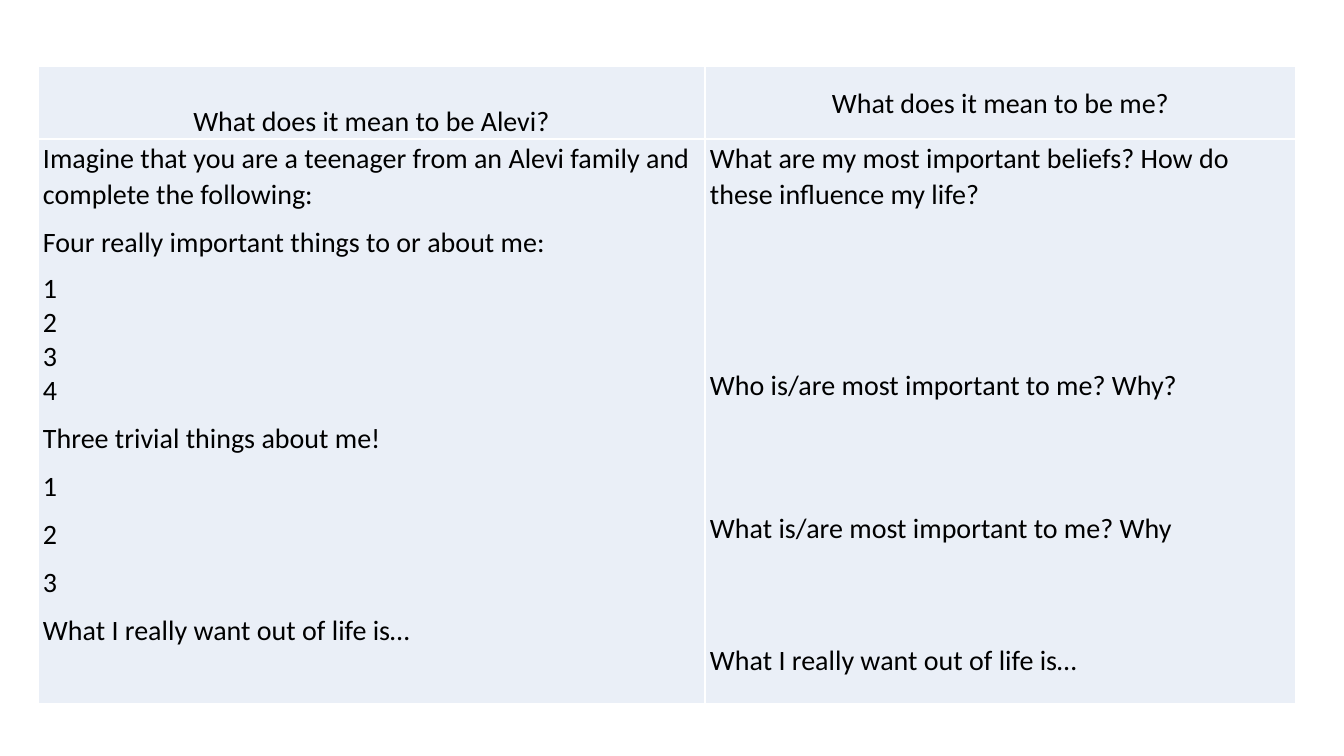
import pptx
import pptx.util
from pptx.dml.color import RGBColor
from pptx.enum.text import MSO_ANCHOR, PP_ALIGN
from pptx.oxml import parse_xml
from pptx.oxml.ns import nsdecls

# Content: each cell is a list of (text, line spacing, points of space before)
LOOSE, SINGLE = 1.07, 1.0
HEADINGS = [
    [("What does it mean to be Alevi?", LOOSE, 0)],
    [("What does it mean to be me?", LOOSE, 0)],
]
PROMPTS = [
    [
        ("Imagine that you are a teenager from an Alevi family and complete the following:", LOOSE, 0),
        ("Four really important things to or about me:", LOOSE, 0),
        ("1\n2\n3\n4", SINGLE, 0),
        ("Three trivial things about me!", LOOSE, 0),
        ("1", LOOSE, 0),
        ("2", LOOSE, 0),
        ("3", LOOSE, 0),
        ("What I really want out of life is…", LOOSE, 0),
    ],
    [
        ("What are my most important beliefs? How do these influence my life?", LOOSE, 0),
        ("Who is/are most important to me? Why?", LOOSE, 102),
        ("What is/are most important to me? Why", LOOSE, 68),
        ("What I really want out of life is…", LOOSE, 60),
    ],
]

COLORS = {"cell": "EAEFF7", "border": "FFFFFF", "text": "000000"}
FONT, TEXT_SIZE, SPACE_AFTER = "Calibri", 20, 8

# Layout in px
SLIDE_WIDTH, SLIDE_HEIGHT = 1344, 756
TABLE_LEFT, TABLE_TOP = 38, 66
COLUMN_WIDTHS = [667, 591]
ROW_HEIGHTS = [73, 565]
SIDE_MARGIN = 5
FIRST_HEADING_DROP = 36


def px(length):
    return pptx.util.Emu(round(length * 914400 / 100.8))


def style_cell(cell, top_margin):
    cell.margin_left = cell.margin_right = px(SIDE_MARGIN)
    cell.margin_top, cell.margin_bottom = px(top_margin), 0
    properties = cell._tc.get_or_add_tcPr()
    for side in ("lnL", "lnR", "lnT", "lnB"):
        properties.append(parse_xml(
            f'<a:{side} {nsdecls("a")} w="12700"><a:solidFill>'
            f'<a:srgbClr val="{COLORS["border"]}"/></a:solidFill></a:{side}>'))
    cell.fill.solid()
    cell.fill.fore_color.rgb = RGBColor.from_string(COLORS["cell"])


def write_cell(cell, lines, alignment, space_after):
    text_frame = cell.text_frame
    for index, (text, spacing, space_before) in enumerate(lines):
        paragraph = text_frame.add_paragraph() if index else text_frame.paragraphs[0]
        paragraph.text = text
        paragraph.alignment = alignment
        paragraph.line_spacing = spacing
        paragraph.space_before = pptx.util.Pt(space_before)
        paragraph.space_after = pptx.util.Pt(space_after)
        for run in paragraph.runs:
            run.font.name = FONT
            run.font.size = pptx.util.Pt(TEXT_SIZE)
            run.font.bold = False
            run.font.color.rgb = RGBColor.from_string(COLORS["text"])


def main():
    presentation = pptx.Presentation()
    presentation.slide_width, presentation.slide_height = px(SLIDE_WIDTH), px(SLIDE_HEIGHT)
    slide = presentation.slides.add_slide(presentation.slide_layouts[6])

    # Table grid
    table = slide.shapes.add_table(
        len(ROW_HEIGHTS), len(COLUMN_WIDTHS), px(TABLE_LEFT), px(TABLE_TOP),
        px(sum(COLUMN_WIDTHS)), px(sum(ROW_HEIGHTS))).table
    table.first_row = table.horz_banding = False
    for column, width in zip(table.columns, COLUMN_WIDTHS):
        column.width = px(width)
    for row, height in zip(table.rows, ROW_HEIGHTS):
        row.height = px(height)

    # Headings and prompts
    for column, (heading, prompts) in enumerate(zip(HEADINGS, PROMPTS)):
        heading_cell, prompt_cell = table.cell(0, column), table.cell(1, column)
        style_cell(heading_cell, 0 if column else FIRST_HEADING_DROP)
        heading_cell.vertical_anchor = MSO_ANCHOR.MIDDLE
        write_cell(heading_cell, heading, PP_ALIGN.CENTER, 0)
        style_cell(prompt_cell, 0)
        prompt_cell.vertical_anchor = MSO_ANCHOR.TOP
        write_cell(prompt_cell, prompts, PP_ALIGN.LEFT, SPACE_AFTER)

    presentation.save("out.pptx")


if __name__ == "__main__":
    main()
